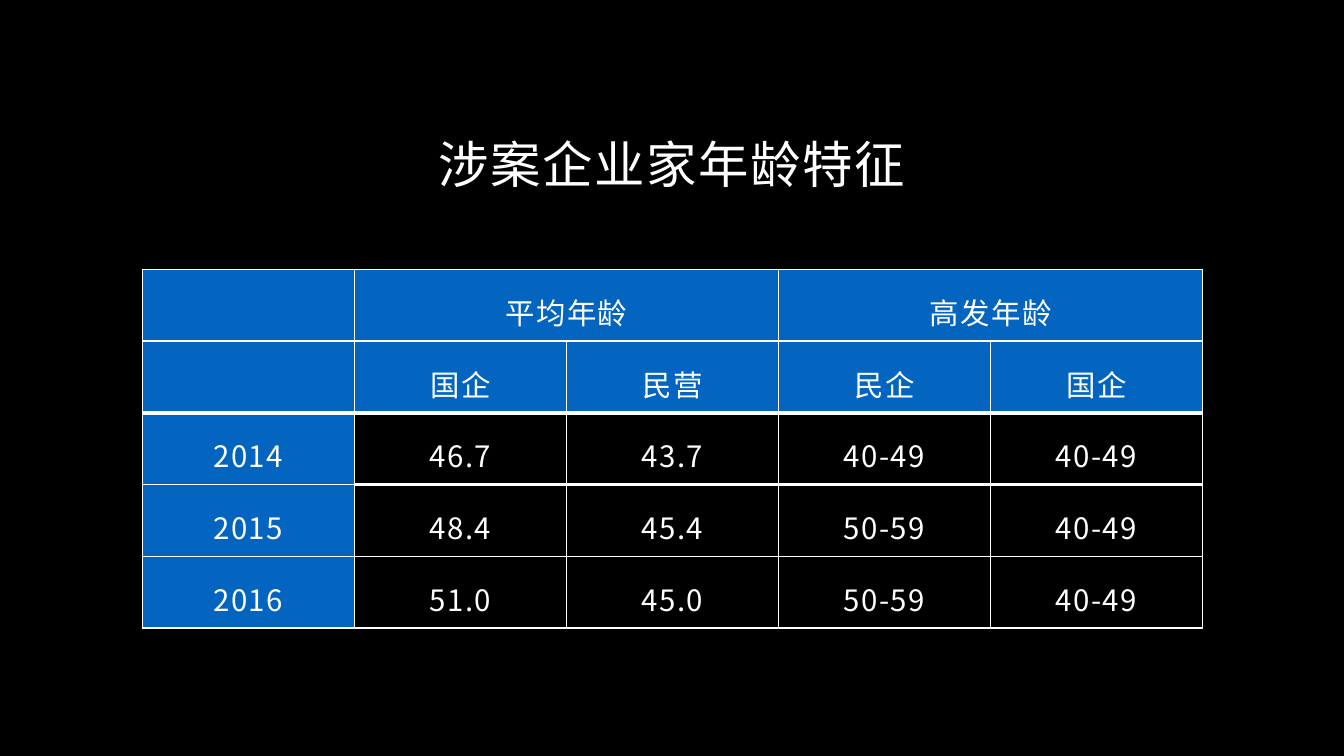
import lxml.etree
import pptx
import pptx.dml.color
import pptx.enum.text
import pptx.oxml.ns
import pptx.util


def rgb(value):
    return pptx.dml.color.RGBColor.from_string(value)


def write(tf, text, size, color, font, spacing=1.3, tracking=1.1):
    p = tf.paragraphs[0]
    p.alignment = pptx.enum.text.PP_ALIGN.CENTER
    p.line_spacing = spacing
    r = p.add_run()
    r.text = text
    r.font.name = font
    r.font.size = pptx.util.Pt(size)
    r.font.bold = False
    r.font.color.rgb = rgb(color)
    props = r._r.get_or_add_rPr()
    props.set("spc", str(round(tracking * 100)))
    lxml.etree.SubElement(props, pptx.oxml.ns.qn("a:ea"), typeface=font)


class Deck:
    font = "Noto Sans CJK SC"
    black, white, blue = "000000", "FFFFFF", "0365C0"
    title_size, cell_size = 36, 21
    thin, thick = 1, 3

    def __init__(self, width, height):
        self.prs = pptx.Presentation()
        self.prs.slide_width = pptx.util.Inches(width)
        self.prs.slide_height = pptx.util.Inches(height)

    def add_slide(self):
        self.s = self.prs.slides.add_slide(self.prs.slide_layouts[5])
        self.s.background.fill.solid()
        self.s.background.fill.fore_color.rgb = rgb(self.black)

    def box(self, left, top, width, height):
        w, h = self.prs.slide_width, self.prs.slide_height
        return [round(share * side / 100) for share, side in
                ((left, w), (top, h), (width, w), (height, h))]

    def title(self, text, *shares):
        sp = self.s.shapes.title
        sp.left, sp.top, sp.width, sp.height = self.box(*shares)
        tf = sp.text_frame
        tf.word_wrap = True
        tf.auto_size = pptx.enum.text.MSO_AUTO_SIZE.NONE
        tf.vertical_anchor = pptx.enum.text.MSO_ANCHOR.MIDDLE
        tf.margin_left = tf.margin_right = pptx.util.Inches(0.06)
        tf.margin_top = tf.margin_bottom = pptx.util.Inches(0.06)
        write(tf, text, self.title_size, self.white, self.font)

    def borders(self, cell, widths):
        props = cell._tc.get_or_add_tcPr()
        for i, (side, width) in enumerate(zip("LRTB", widths)):
            ln = lxml.etree.Element(pptx.oxml.ns.qn("a:ln" + side),
                                    w=str(pptx.util.Pt(width)))
            fill = lxml.etree.SubElement(ln, pptx.oxml.ns.qn("a:solidFill"))
            lxml.etree.SubElement(fill, pptx.oxml.ns.qn("a:srgbClr"), val=self.white)
            props.insert(i, ln)

    def cell(self, cell, text, filled, widths):
        cell.margin_left = cell.margin_right = 0
        cell.margin_top = cell.margin_bottom = 0
        cell.vertical_anchor = pptx.enum.text.MSO_ANCHOR.MIDDLE
        if filled:
            cell.fill.solid()
            cell.fill.fore_color.rgb = rgb(self.blue)
        else:
            cell.fill.background()
        self.borders(cell, widths)
        if text:
            write(cell.text_frame, text, self.cell_size, self.white, self.font)

    def table(self, rows, header_rows, spans, *shares):
        frame = self.s.shapes.add_table(len(rows), len(rows[0]), *self.box(*shares))
        table = frame.table
        table.first_row = table.horz_banding = False
        for row, start, end in spans:
            table.cell(row, start).merge(table.cell(row, end))
        for i, row in enumerate(rows):
            for j, text in enumerate(row):
                rules = {header_rows} if j == 0 else {header_rows, header_rows + 1}
                top, bottom = (self.thick if edge in rules else self.thin
                               for edge in (i, i + 1))
                self.cell(table.cell(i, j), text, i < header_rows or j == 0,
                          (self.thin, self.thin, top, bottom))


def main():
    deck = Deck(13.33, 7.5)
    deck.add_slide()
    deck.title("涉案企业家年龄特征", 18.98, 16.4, 62.04, 8.13)
    ages = [
        ["", "平均年龄", "", "高发年龄", ""],
        ["", "国企", "民营", "民企", "国企"],
        ["2014", "46.7", "43.7", "40-49", "40-49"],
        ["2015", "48.4", "45.4", "50-59", "40-49"],
        ["2016", "51.0", "45.0", "50-59", "40-49"],
    ]
    deck.table(ages, 2, [(0, 1, 2), (0, 3, 4)], 10.58, 35.6, 78.9, 47.5)
    deck.prs.save("out.pptx")


if __name__ == "__main__":
    main()
